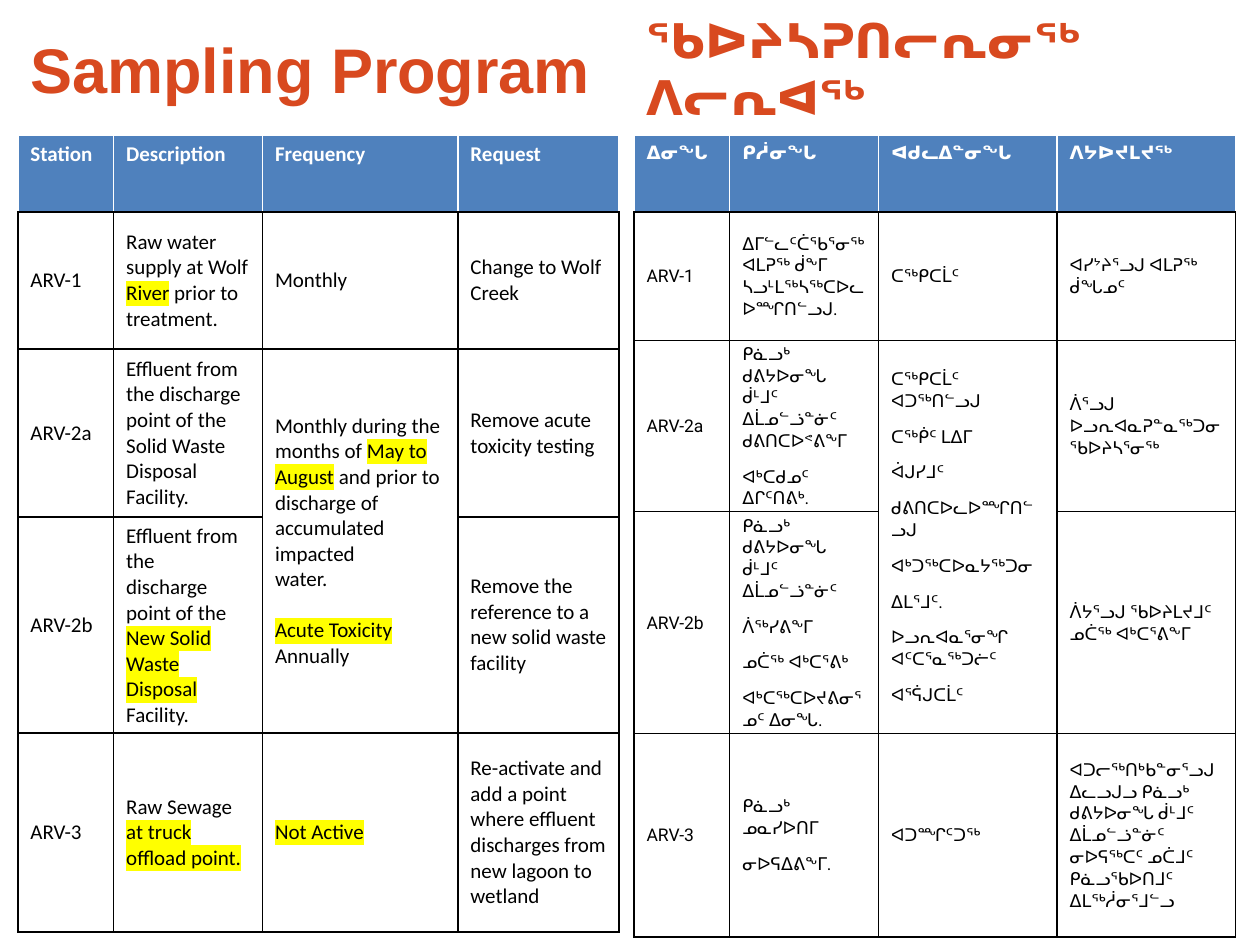
from dataclasses import dataclass

from lxml.etree import SubElement
from pptx import Presentation
from pptx.dml.color import RGBColor
from pptx.enum.text import MSO_ANCHOR, PP_ALIGN
from pptx.oxml import parse_xml
from pptx.oxml.ns import nsdecls, qn
from pptx.slide import Slide
from pptx.util import Cm, Pt

LEFT_X, RIGHT_X = 0.36, 12.78
TABLE_Y, TABLE_W = 2.72, 12.14
HEADER_H = 1.55


def rgb(value):
    return RGBColor.from_string(value)


@dataclass
class Deck:
    slide: Slide
    accent: str = "D8491F"
    header: str = "4F81BD"
    marker: str = "FFFF00"
    white: str = "FFFFFF"
    black: str = "000000"

    def font(self, p, name, size, color, bold):
        p.font.name = name
        p.font.size = Pt(size)
        p.font.bold = bold
        p.font.color.rgb = rgb(color)

    def heading(self, sp, text, box, size, anchor):
        sp.left, sp.top, sp.width, sp.height = (Cm(v) for v in box)
        tf = sp.text_frame
        tf.word_wrap = True
        tf.vertical_anchor = anchor
        p = tf.paragraphs[0]
        p.add_run().text = text
        p.alignment = PP_ALIGN.LEFT
        self.font(p, "Arial", size, self.accent, True)

    def title(self, text, box, size, anchor):
        self.heading(self.slide.shapes.title, text, box, size, anchor)

    def text(self, text, box, size, anchor):
        sp = self.slide.shapes.add_textbox(*(Cm(v) for v in box))
        self.heading(sp, text, box, size, anchor)

    def borders(self, cell, is_header):
        edge = self.white if is_header else self.black
        tc_pr = cell._tc.get_or_add_tcPr()
        colors = {"lnL": edge, "lnR": edge, "lnT": edge, "lnB": self.black}
        for i, (tag, color) in enumerate(colors.items()):
            tc_pr.insert(i, parse_xml(
                f'<a:{tag} {nsdecls("a")} w="{Pt(1)}"><a:solidFill>'
                f'<a:srgbClr val="{color}"/></a:solidFill></a:{tag}>'))

    def highlight(self, r):
        mark = SubElement(r._r.get_or_add_rPr(), qn("a:highlight"))
        SubElement(mark, qn("a:srgbClr")).set("val", self.marker)

    def fill_cell(self, cell, text, is_header, name, size, line, after):
        gap = False
        started = False
        for content in text.split("\n"):
            if not content:
                gap = True
                continue
            tf = cell.text_frame
            p = tf.add_paragraph() if started else tf.paragraphs[0]
            started = True
            for i, part in enumerate(content.split("|")):
                if part:
                    r = p.add_run()
                    r.text = part
                    if i % 2:
                        self.highlight(r)
            p.line_spacing = line
            p.space_after = Pt(after)
            if gap:
                p.space_before = Pt(14.6)
                gap = False
            self.font(p, name, size, self.white if is_header else self.black, is_header)

    def table(self, x, cols, heights, rows, name, sizes, line=1.0, after=0, pad=0.13):
        heights = [HEADER_H, *heights]
        frame = self.slide.shapes.add_table(
            len(rows), len(cols), Cm(x), Cm(TABLE_Y), Cm(TABLE_W), Cm(sum(heights)))
        table = frame.table
        table.horz_banding = False
        for col, width in zip(table.columns, cols):
            col.width = Cm(width)
        for row, height in zip(table.rows, heights):
            row.height = Cm(height)
        for i, values in enumerate(rows):
            is_header = i == 0
            for j, value in enumerate(values):
                cell = table.cell(i, j)
                if is_header:
                    cell.fill.solid()
                    cell.fill.fore_color.rgb = rgb(self.header)
                else:
                    cell.fill.background()
                    cell.vertical_anchor = MSO_ANCHOR.MIDDLE
                    cell.margin_top = cell.margin_bottom = Cm(pad)
                self.borders(cell, is_header)
                if value is None:
                    table.cell(i - 1, j).merge(cell)
                else:
                    self.fill_cell(cell, value, is_header, name,
                                   sizes[0 if is_header else 1], line, after)


ENGLISH = [
    ["Station", "Description", "Frequency", "Request"],
    ["ARV-1", "Raw water supply at Wolf |River| prior to treatment.",
     "Monthly", "Change to Wolf Creek"],
    ["ARV-2a",
     "Effluent from the discharge point of the\nSolid Waste Disposal Facility.",
     "Monthly during the\nmonths of |May to|\n|August| and prior to\ndischarge of\n"
     "accumulated impacted\nwater.\n\n|Acute Toxicity|\nAnnually",
     "Remove acute toxicity testing"],
    ["ARV-2b",
     "Effluent from the\ndischarge point of the\n|New Solid Waste|\n|Disposal |Facility.",
     None, "Remove the reference to a new solid waste facility"],
    ["ARV-3", "Raw Sewage |at truck|\n|offload point.|", "|Not Active|",
     "Re-activate and add a point where effluent discharges from new lagoon to wetland"],
]

INUKTITUT = [
    ["ᐃᓂᖓ", "ᑭᓲᓂᖓ", "ᐊᑯᓚᐃᓐᓂᖓ", "ᐱᔭᐅᔪᒪᔪᖅ"],
    ["ARV-1", "ᐃᒥᓪᓚᑦᑖᖃᕐᓂᖅ ᐊᒪᕈᖅ ᑰᖕᒥ ᓴᓗᒻᒪᖅᓴᖅᑕᐅᓚᐅᙱᑎᓪᓗᒍ.",
     "ᑕᖅᑭᑕᒫᑦ", "ᐊᓯᔾᔨᕐᓗᒍ ᐊᒪᕈᖅ ᑰᖓᓄᑦ"],
    ["ARV-2a",
     "ᑭᓈᓗᒃ ᑯᕕᔭᐅᓂᖓ ᑰᒻᒧᑦ ᐃᒫᓄᓪᓘᓐᓃᑦ ᑯᕕᑎᑕᐅᕝᕕᖕᒥ\nᐊᒃᑕᑯᓄᑦ ᐃᒋᑦᑎᕕᒃ.",
     "ᑕᖅᑭᑕᒫᑦ ᐊᑐᖅᑎᓪᓗᒍ\nᑕᖅᑮᑦ ᒪᐃᒥ\nᐋᒍᓯᒧᑦ\nᑯᕕᑎᑕᐅᓚᐅᙱᑎᓪᓗᒍ\n"
     "ᐊᒃᑐᖅᑕᐅᓇᔭᖅᑐᓂ\nᐃᒪᕐᒧᑦ.\nᐅᓗᕆᐊᓇᕐᓂᖏ ᐊᑦᑕᕐᓇᖅᑐᓖᑦ\nᐊᕐᕌᒍᑕᒫᑦ",
     "ᐲᕐᓗᒍ ᐅᓗᕆᐊᓇᕈᓐᓇᖅᑐᓂ ᖃᐅᔨᓴᕐᓂᖅ"],
    ["ARV-2b",
     "ᑭᓈᓗᒃ ᑯᕕᔭᐅᓂᖓ ᑰᒻᒧᑦ ᐃᒫᓄᓪᓘᓐᓃᑦ\nᐲᖅᓯᕕᖕᒥ\nᓄᑖᖅ ᐊᒃᑕᕐᕕᒃ\n"
     "ᐊᒃᑕᖅᑕᐅᔪᕕᓂᕐᓄᑦ ᐃᓂᖓ.",
     None, "ᐲᔭᕐᓗᒍ ᖃᐅᔨᒪᔪᒧᑦ ᓄᑖᖅ ᐊᒃᑕᕐᕕᖕᒥ"],
    ["ARV-3", "ᑭᓈᓗᒃ ᓄᓇᓯᐅᑎᒥ\nᓂᐅᕋᐃᕕᖕᒥ.", "ᐊᑐᙱᑦᑐᖅ",
     "ᐊᑐᓕᖅᑎᒃᑲᓐᓂᕐᓗᒍ ᐃᓚᓗᒍᓗ ᑭᓈᓗᒃ ᑯᕕᔭᐅᓂᖓ ᑰᒻᒧᑦ ᐃᒫᓄᓪᓘᓐᓃᑦ "
     "ᓂᐅᕋᖅᑕᑦ ᓄᑖᒧᑦ ᑭᓈᓗᖃᐅᑎᒧᑦ ᐃᒪᖅᓲᓂᕐᒧᓪᓗ"],
]


def main():
    prs = Presentation()
    prs.slide_width, prs.slide_height = Cm(25.4), Cm(19.05)
    deck = Deck(prs.slides.add_slide(prs.slide_layouts[5]))
    deck.title("Sampling Program", (LEFT_X, 0.48, TABLE_W, 1.8), 36, MSO_ANCHOR.TOP)
    deck.text("ᖃᐅᔨᓴᕈᑎᓕᕆᓂᖅ ᐱᓕᕆᐊᖅ", (RIGHT_X, 0.03, TABLE_W, 2.69), 27.3,
              MSO_ANCHOR.MIDDLE)
    deck.table(RIGHT_X, (1.93, 3, 3.6, 3.6), (2.59, 3.33, 4.22, 4.1),
               INUKTITUT, "Roboto", (10.5, 10), 1.07, 8, 0)
    deck.table(LEFT_X, (1.93, 3, 3.94, 3.25), (2.77, 3.38, 4.36, 4.01),
               ENGLISH, "Calibri", (12, 12))
    prs.save("out.pptx")


if __name__ == "__main__":
    main()
